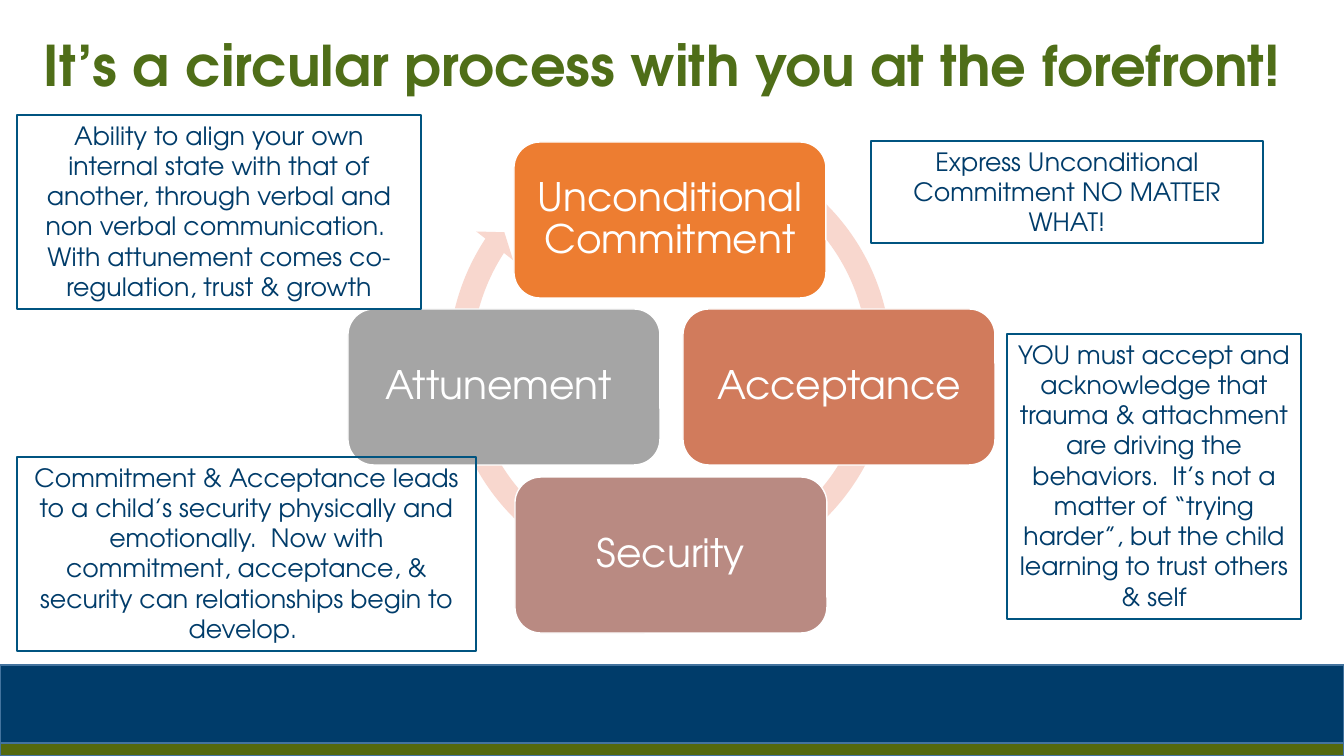
from dataclasses import dataclass

from pptx import Presentation
from pptx.dml.color import RGBColor
from pptx.enum.shapes import MSO_SHAPE as Preset
from pptx.enum.text import MSO_ANCHOR as Anchor, MSO_AUTO_SIZE as AutoSize, PP_ALIGN as Align
from pptx.shapes.autoshape import Shape
from pptx.slide import Slide
from pptx.util import Emu, Pt

EMU_PER_PX = 914400 / 100.8
SLIDE_WIDTH, SLIDE_HEIGHT = 1344, 756
CARD_WIDTH, CARD_HEIGHT = 312, 156
ARROW_ADJUSTMENTS = (0.05, 2.73, 127.98, 180.54, 0.05)


@dataclass(frozen=True)
class Theme:
    font: str = "TeX Gyre Adventor"
    title_size: int = 40
    card_size: int = 28
    note_size: int = 18
    white: str = "FFFFFF"
    navy: str = "003C6A"
    title_green: str = "4F6E18"
    footer_green: str = "54690E"
    footer_line: str = "43739E"
    note_line: str = "005480"
    arrow: str = "F8D7CE"


@dataclass(frozen=True)
class Box:
    left: int
    top: int
    width: int
    height: int


@dataclass(frozen=True)
class Card:
    text: str
    left: int
    top: int
    fill: str


@dataclass(frozen=True)
class Note:
    text: str
    box: Box


THEME = Theme()

CARDS = (
    Card("Unconditional Commitment", 514, 142, "ED7D31"),
    Card("Acceptance", 683, 309, "D17B5C"),
    Card("Security", 515, 477, "B98A82"),
    Card("Attunement ", 348, 309, "A5A5A5"),
)

NOTES = (
    Note("Express Unconditional Commitment NO MATTER WHAT!", Box(871, 141, 392, 102)),
    Note(
        "YOU must accept and acknowledge that trauma & attachment are driving the "
        "behaviors.  It’s not a matter of “trying harder”, but the child learning "
        "to trust others & self",
        Box(1007, 334, 294, 285),
    ),
    Note(
        "Commitment & Acceptance leads to a child’s security physically and "
        "emotionally.  Now with commitment, acceptance, & security can "
        "relationships begin to develop. ",
        Box(17, 457, 459, 194),
    ),
    Note(
        "Ability to align your own internal state with that of another, through "
        "verbal and non verbal communication.  With attunement comes "
        "co-regulation, trust & growth",
        Box(17, 115, 404, 194),
    ),
)


def px(length: float) -> Emu:
    return Emu(round(length * EMU_PER_PX))


def place(box: Box) -> tuple[Emu, Emu, Emu, Emu]:
    return px(box.left), px(box.top), px(box.width), px(box.height)


def add_panel(
    slide: Slide, preset: Preset, box: Box, *, fill: str | None = None, line: str | None = None
) -> Shape:
    shape = slide.shapes.add_shape(preset, *place(box))
    shape.shadow.inherit = False
    if fill:
        shape.fill.solid()
        shape.fill.fore_color.rgb = RGBColor.from_string(fill)
    else:
        shape.fill.background()
    if line:
        shape.line.color.rgb = RGBColor.from_string(line)
        shape.line.width = Pt(1)
    else:
        shape.line.fill.background()
    return shape


def write_text(
    shape: Shape,
    text: str,
    *,
    size: int,
    color: str,
    bold: bool = False,
    anchor: Anchor = Anchor.MIDDLE,
    line_spacing: float = 0.9,
    inset_x: int = 10,
    inset_y: int = 5,
    auto_size: AutoSize = AutoSize.NONE,
) -> None:
    frame = shape.text_frame
    frame.word_wrap = True
    frame.auto_size = auto_size
    frame.vertical_anchor = anchor
    frame.margin_left = frame.margin_right = px(inset_x)
    frame.margin_top = frame.margin_bottom = px(inset_y)
    paragraph = frame.paragraphs[0]
    paragraph.alignment = Align.CENTER
    paragraph.line_spacing = line_spacing
    run = paragraph.add_run()
    run.text = text
    run.font.name = THEME.font
    run.font.size = Pt(size)
    run.font.bold = bold
    run.font.color.rgb = RGBColor.from_string(color)


def add_footer(slide: Slide) -> None:
    for top, height, fill in ((743, 13, THEME.footer_green), (665, 78, THEME.navy)):
        box = Box(0, top, SLIDE_WIDTH, height)
        add_panel(slide, Preset.RECTANGLE, box, fill=fill, line=THEME.footer_line)


def add_title(slide: Slide) -> None:
    title = slide.shapes.add_textbox(*place(Box(17, 0, 1306, 136)))
    write_text(
        title,
        "It’s a circular process with you at the forefront! ",
        size=THEME.title_size,
        color=THEME.title_green,
        bold=True,
    )


def add_cycle_arrow(slide: Slide) -> None:
    arrow = add_panel(slide, Preset.CIRCULAR_ARROW, Box(437, 128, 466, 466), fill=THEME.arrow)
    for index, value in enumerate(ARROW_ADJUSTMENTS):
        arrow.adjustments[index] = value


def add_card(slide: Slide, card: Card) -> None:
    box = Box(card.left, card.top, CARD_WIDTH, CARD_HEIGHT)
    shape = add_panel(slide, Preset.ROUNDED_RECTANGLE, box, fill=card.fill, line=THEME.white)
    write_text(
        shape, card.text, size=THEME.card_size, color=THEME.white, inset_x=12, inset_y=12
    )


def add_note(slide: Slide, note: Note) -> None:
    shape = add_panel(slide, Preset.RECTANGLE, note.box, line=THEME.note_line)
    write_text(
        shape,
        note.text,
        size=THEME.note_size,
        color=THEME.navy,
        anchor=Anchor.TOP,
        line_spacing=1.0,
        auto_size=AutoSize.SHAPE_TO_FIT_TEXT,
    )


def main() -> None:
    presentation = Presentation()
    presentation.slide_width = px(SLIDE_WIDTH)
    presentation.slide_height = px(SLIDE_HEIGHT)
    slide = presentation.slides.add_slide(presentation.slide_layouts[6])
    add_footer(slide)
    add_title(slide)
    add_cycle_arrow(slide)
    for card in CARDS:
        add_card(slide, card)
    for note in NOTES:
        add_note(slide, note)
    presentation.save("out.pptx")


if __name__ == "__main__":
    main()
